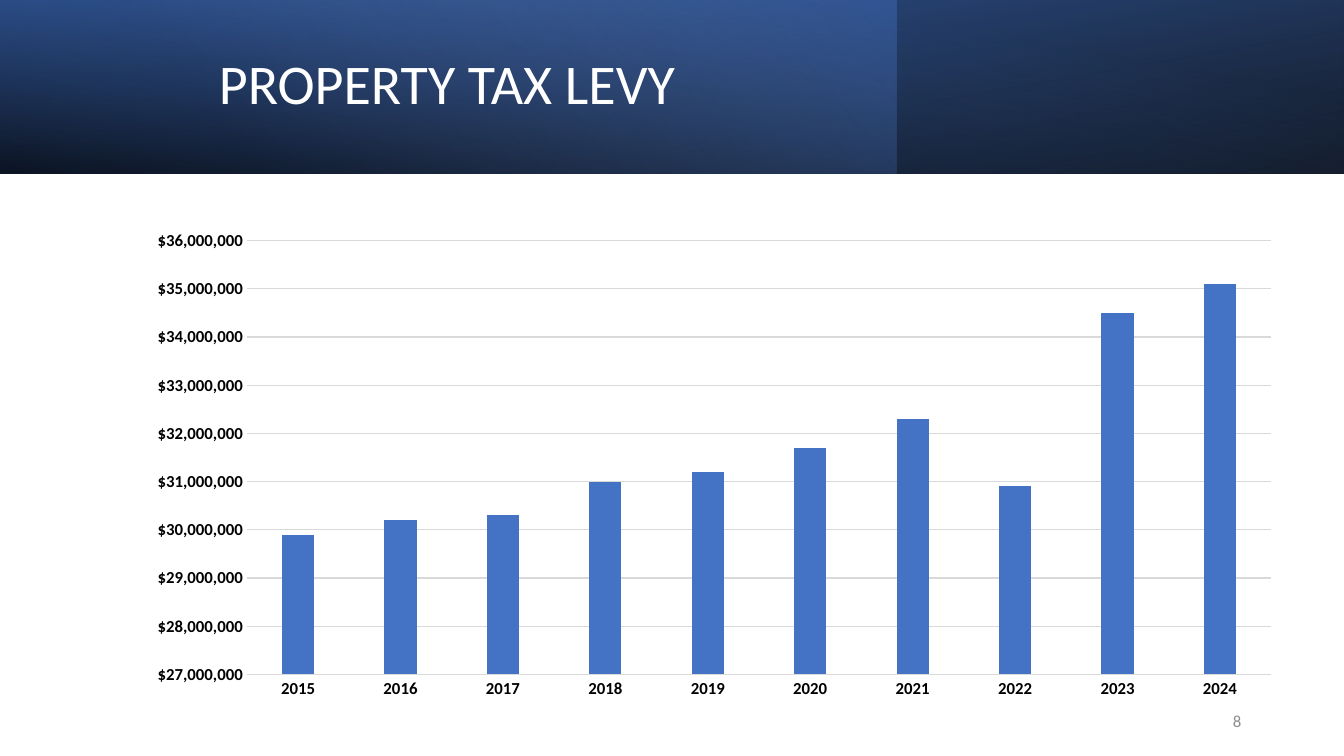
from lxml.etree import SubElement
from pptx import Presentation
from pptx.chart.data import CategoryChartData
from pptx.dml.color import RGBColor
from pptx.enum.chart import XL_CHART_TYPE as ChartType, XL_TICK_MARK as TickMark
from pptx.enum.shapes import MSO_SHAPE as Preset
from pptx.enum.text import MSO_ANCHOR as Anchor, PP_ALIGN as Align
from pptx.oxml.ns import qn
from pptx.util import Inches, Pt

WIDTH, HEIGHT = 13.33, 7.5
FONT = "Calibri"
COLORS = {
    "black": "000000",
    "white": "FFFFFF",
    "navy": "2F5597",
    "blue": "4472C4",
    "pale": "8FAADC",
    "grid": "D9D9D9",
    "number": "8C8C8C",
}
BAND_HEIGHT = 22.93
LEVIES = {
    "2015": 29900000,
    "2016": 30200000,
    "2017": 30300000,
    "2018": 31000000,
    "2019": 31200000,
    "2020": 31700000,
    "2021": 32300000,
    "2022": 30900000,
    "2023": 34500000,
    "2024": 35100000,
}


def rgb(name):
    return RGBColor.from_string(COLORS[name])


def place(left, top, width, height):
    """Turn percentages of the slide's size into lengths."""
    return (Inches(WIDTH * left / 100), Inches(HEIGHT * top / 100),
            Inches(WIDTH * width / 100), Inches(HEIGHT * height / 100))


def add_band(slide, width, stops, angle, rotation=0, flip=False):
    """Add a header band; each stop is (position, colour, opacity)."""
    band = slide.shapes.add_shape(Preset.RECTANGLE, *place(0, 0, width, BAND_HEIGHT))
    band.shadow.inherit = False
    band.line.fill.background()
    band.rotation = rotation
    band.fill.gradient()
    properties = band.element.spPr
    if flip:
        properties.find(qn("a:xfrm")).set("flipH", "1")
    gradient = properties.find(qn("a:gradFill"))
    for child in list(gradient):
        gradient.remove(child)
    stop_list = SubElement(gradient, qn("a:gsLst"))
    for position, color, opacity in stops:
        stop = SubElement(stop_list, qn("a:gs"), pos=str(position * 1000))
        tint = SubElement(stop, qn("a:srgbClr"), val=COLORS[color])
        SubElement(tint, qn("a:alpha"), val=str(opacity * 1000))
    SubElement(gradient, qn("a:lin"), ang=str(angle * 60000), scaled="0")


def set_font(font, size, color, bold=False):
    font.name = FONT
    font.size = Pt(size)
    font.bold = bold
    font.color.rgb = rgb(color)


def add_text(slide, text, box, size, color, align=Align.LEFT, spacing=1.0):
    frame = slide.shapes.add_textbox(*place(*box)).text_frame
    frame.word_wrap = True
    frame.vertical_anchor = Anchor.MIDDLE
    paragraph = frame.paragraphs[0]
    paragraph.alignment = align
    paragraph.line_spacing = spacing
    run = paragraph.add_run()
    run.text = text
    set_font(run.font, size, color)


def style_axis(axis):
    axis.major_tick_mark = axis.minor_tick_mark = TickMark.NONE
    set_font(axis.tick_labels.font, 12, "black", bold=True)


def style_line(line):
    line.color.rgb = rgb("grid")
    line.width = Pt(0.75)


def fix_plot_area(chart, **percentages):
    """Pin the inner plot area, in percentages of the chart's size."""
    plot_area = chart.element.find(".//" + qn("c:plotArea"))
    layout = plot_area.find(qn("c:layout"))
    if layout is None:
        layout = SubElement(plot_area, qn("c:layout"))
        plot_area.insert(0, layout)
    manual = SubElement(layout, qn("c:manualLayout"))
    shares = {tag: value / 100 for tag, value in percentages.items()}
    settings = {"layoutTarget": "inner", "xMode": "edge", "yMode": "edge", **shares}
    for tag, value in settings.items():
        SubElement(manual, qn("c:" + tag), val=str(value))


def add_levy_chart(slide, box):
    data = CategoryChartData()
    data.categories = list(LEVIES)
    data.add_series("Series 1", list(LEVIES.values()))
    chart = slide.shapes.add_chart(ChartType.COLUMN_CLUSTERED, *place(*box), data).chart
    chart.has_legend = chart.has_title = False
    set_font(chart.font, 10, "black")

    # Columns
    plot = chart.plots[0]
    plot.vary_by_categories = False
    plot.gap_width, plot.overlap = 219, -27
    levy_fill = plot.series[0].format.fill
    levy_fill.solid()
    levy_fill.fore_color.rgb = rgb("blue")

    # Axes
    years, dollars = chart.category_axis, chart.value_axis
    for axis in (years, dollars):
        style_axis(axis)
    style_line(years.format.line)
    style_line(dollars.major_gridlines.format.line)
    dollars.format.line.fill.background()
    dollars.minimum_scale, dollars.maximum_scale = 27000000, 36000000
    dollars.major_unit = 1000000
    dollars.tick_labels.number_format = '"$"#,##0'
    dollars.tick_labels.number_format_is_linked = False
    fix_plot_area(chart, x=16, y=4.9, w=82, h=88.4)


def main():
    deck = Presentation()
    deck.slide_width, deck.slide_height = Inches(WIDTH), Inches(HEIGHT)
    slide = deck.slides.add_slide(deck.slide_layouts[6])

    # Header: three layered gradients
    add_band(slide, 100, [(0, "black", 96), (100, "navy", 100)], 100,
             rotation=180, flip=True)
    add_band(slide, 66.67, [(0, "blue", 41), (74, "pale", 0)], 140)
    add_band(slide, 100, [(0, "black", 63), (78, "blue", 15)], 260, flip=True)
    add_text(slide, "PROPERTY TAX LEVY", (15.55, 2.95, 35.56, 16.93), 40, "white",
             spacing=0.9)

    # Levy by year
    add_levy_chart(slide, (3.5, 28.65, 92.95, 64.93))

    # Slide number
    add_text(slide, "8", (70.6, 92.67, 22.5, 5.33), 12, "number", align=Align.RIGHT)

    deck.save("out.pptx")


if __name__ == "__main__":
    main()
